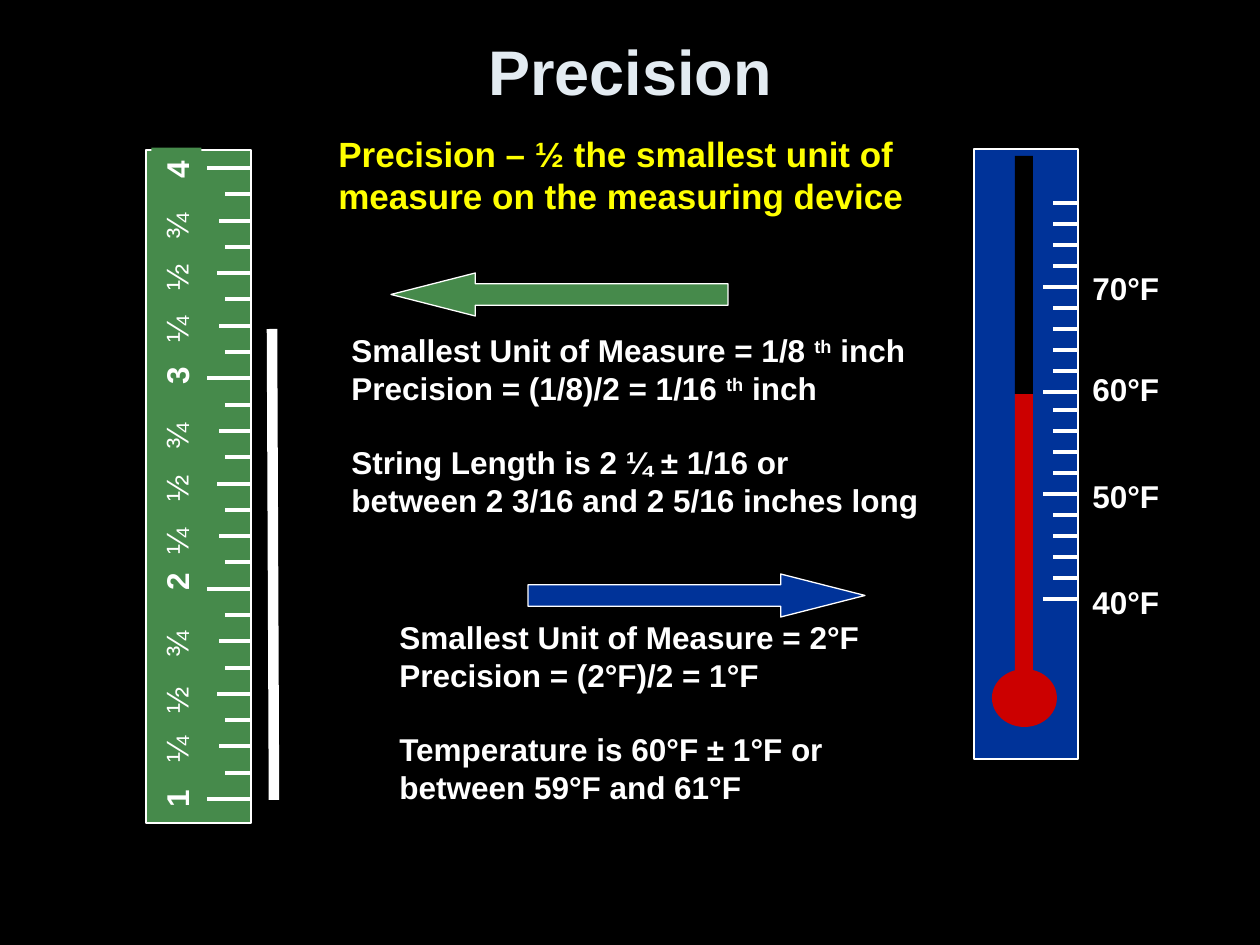
from dataclasses import dataclass

from lxml import etree
from pptx import Presentation
from pptx import util as u
from pptx.dml.color import RGBColor
from pptx.enum import shapes, text
from pptx.oxml.ns import qn

SCALE = u.Inches(1) / 126  # EMU in one px
RECT = shapes.MSO_SHAPE.RECTANGLE


@dataclass(frozen=True)
class Theme:
    font: str = "Arial"
    black: str = "000000"
    white: str = "FFFFFF"
    pale: str = "E3EBF1"
    gold: str = "FFFF00"
    green: str = "468A4B"
    blue: str = "003399"
    red: str = "CC0000"
    head: int = 36
    lead: int = 20
    body: int = 18
    edge: float = 0.75
    tick: float = 2.25
    string: float = 6


@dataclass(frozen=True)
class Box:
    x: int
    y: int
    w: int
    h: int

    def emu(self) -> list:
        return [px(v) for v in (self.x, self.y, self.w, self.h)]


@dataclass(frozen=True)
class Copy:
    box: Box
    lines: tuple
    size: int
    color: str
    wrap: bool = False
    align: str = "LEFT"
    anchor: str = "TOP"
    bold: bool = True


T = Theme()


def px(n: float) -> u.Emu:
    return u.Emu(round(n * SCALE))


def rgb(code: str) -> RGBColor:
    return RGBColor.from_string(code)


def apply(item, form: dict) -> None:
    for key, value in form.items():
        setattr(item, key, value)


def write(frame, copy: Copy) -> None:
    """Fill a text frame; ^marks^ enclose superscript, "" makes a line's gap."""
    apply(frame, {
        "word_wrap": copy.wrap,
        "auto_size": text.MSO_AUTO_SIZE.SHAPE_TO_FIT_TEXT,
        "vertical_anchor": getattr(text.MSO_ANCHOR, copy.anchor),
    })
    font = {"name": T.font, "size": u.Pt(copy.size), "bold": copy.bold}
    para, gap = None, False
    for line in copy.lines:
        if not line:
            gap = True
            continue
        para = frame.add_paragraph() if para is not None else frame.paragraphs[0]
        para.alignment = getattr(text.PP_ALIGN, copy.align)
        if gap:
            para.space_before = u.Pt(copy.size * 1.15)
            gap = False
        for i, part in enumerate(line.split("^")):
            run = para.add_run()
            run.text = part
            apply(run.font, font)
            run.font.color.rgb = rgb(copy.color)
            if i % 2:
                run.font._element.set("baseline", "30000")


def label(parts, copy: Copy) -> None:
    write(parts.add_textbox(*copy.box.emu()).text_frame, copy)


def shape(parts, kind, box: Box, fill: str, edge: bool = False):
    item = parts.add_shape(kind, *box.emu())
    item.shadow.inherit = False
    item.fill.solid()
    item.fill.fore_color.rgb = rgb(fill)
    if edge:
        item.line.color.rgb = rgb(T.white)
        item.line.width = u.Pt(T.edge)
    else:
        item.line.fill.background()
    return item


def line(parts, start: tuple, end: tuple, width: float) -> None:
    item = parts.add_connector(
        shapes.MSO_CONNECTOR.STRAIGHT, *map(px, start + end))
    item.line.color.rgb = rgb(T.white)
    item.line.width = u.Pt(width)
    etree.SubElement(item._element.spPr, qn("a:effectLst"))


def arrow(parts, kind, box: Box, fill: str) -> None:
    item = shape(parts, kind, box, fill, edge=True)
    item.adjustments[0] = 0.5
    item.adjustments[1] = 1.96


def gauge(parts) -> None:
    """Thermometer with a mark every 2°F."""
    shape(parts, RECT, Box(974, 149, 104, 610), T.blue, edge=True)
    shape(parts, shapes.MSO_SHAPE.OVAL, Box(992, 669, 65, 58), T.red)
    shape(parts, RECT, Box(1015, 394, 18, 291), T.red)
    shape(parts, RECT, Box(1015, 156, 18, 238), T.black)
    for top in (203, 410):
        for i in range(10):
            y = top + 21 * i
            left = 1043 if i % 5 == 4 else 1053
            line(parts, (1077, y), (left, y), T.tick)
    for deg, y in ((40, 577), (50, 471), (60, 364), (70, 263)):
        label(parts, Copy(Box(1080, y, 92, 50), (f"{deg}°F",), T.body, T.white))


def ruler(parts) -> None:
    """Inch ruler with a mark every eighth."""
    shape(parts, RECT, Box(146, 150, 105, 673), T.green, edge=True)
    lefts = {0: 207, 4: 217, 2: 219, 6: 219}
    for i in range(25):
        y = round(168 + 631 * i / 24)
        line(parts, (251, y), (lefts.get(i % 8, 225), y), T.tick)
    marks = {
        "1": (798,), "2": (581,), "3": (375,), "4": (169,),
        "½": (696, 484, 273), "¼": (745, 537, 325), "¾": (640, 432, 222),
    }
    for mark, mids in marks.items():
        whole = mark in "1234"
        w, h = (43 if whole else 60), 50
        for mid in mids:
            box = Box(176 - w // 2, mid - h // 2, w, h)
            item = shape(parts, RECT, box, T.green)
            item.rotation = 270
            write(item.text_frame,
                  Copy(box, (mark,), T.body, T.white, bold=whole))


def main() -> None:
    deck = Presentation()
    apply(deck, {"slide_width": px(1260), "slide_height": px(945)})
    slide = deck.slides.add_slide(deck.slide_layouts[6])
    slide.background.fill.solid()
    slide.background.fill.fore_color.rgb = rgb(T.black)
    parts = slide.shapes

    # Title and definition
    label(parts, Copy(Box(63, 10, 1134, 121), ("Precision",), T.head, T.pale,
                      wrap=True, align="CENTER", anchor="MIDDLE"))
    label(parts, Copy(Box(326, 126, 602, 97), (
        "Precision – ½ the smallest unit of measure on the measuring device",
    ), T.lead, T.gold, wrap=True))

    # Measuring devices
    gauge(parts.add_group_shape().shapes)
    ruler(parts.add_group_shape().shapes)

    # Worked examples
    label(parts, Copy(Box(387, 612, 485, 202), (
        "Smallest Unit of Measure = 2°F",
        "Precision = (2°F)/2 = 1°F",
        "",
        "Temperature is 60°F ± 1°F or",
        "between 59°F and 61°F",
    ), T.body, T.white))
    label(parts, Copy(Box(339, 325, 592, 202), (
        "Smallest Unit of Measure = 1/8 ^th^ inch",
        "Precision = (1/8)/2 = 1/16 ^th^ inch",
        "",
        "String Length is 2 ¼ ± 1/16 or",
        "between 2 3/16 and 2 5/16 inches long",
    ), T.body, T.white))

    # Measured string and pointers
    line(parts, (274, 800), (272, 329), T.string)
    arrow(parts, shapes.MSO_SHAPE.LEFT_ARROW, Box(391, 273, 337, 43), T.green)
    arrow(parts, shapes.MSO_SHAPE.RIGHT_ARROW, Box(528, 574, 337, 43), T.blue)

    deck.save("out.pptx")


if __name__ == "__main__":
    main()
